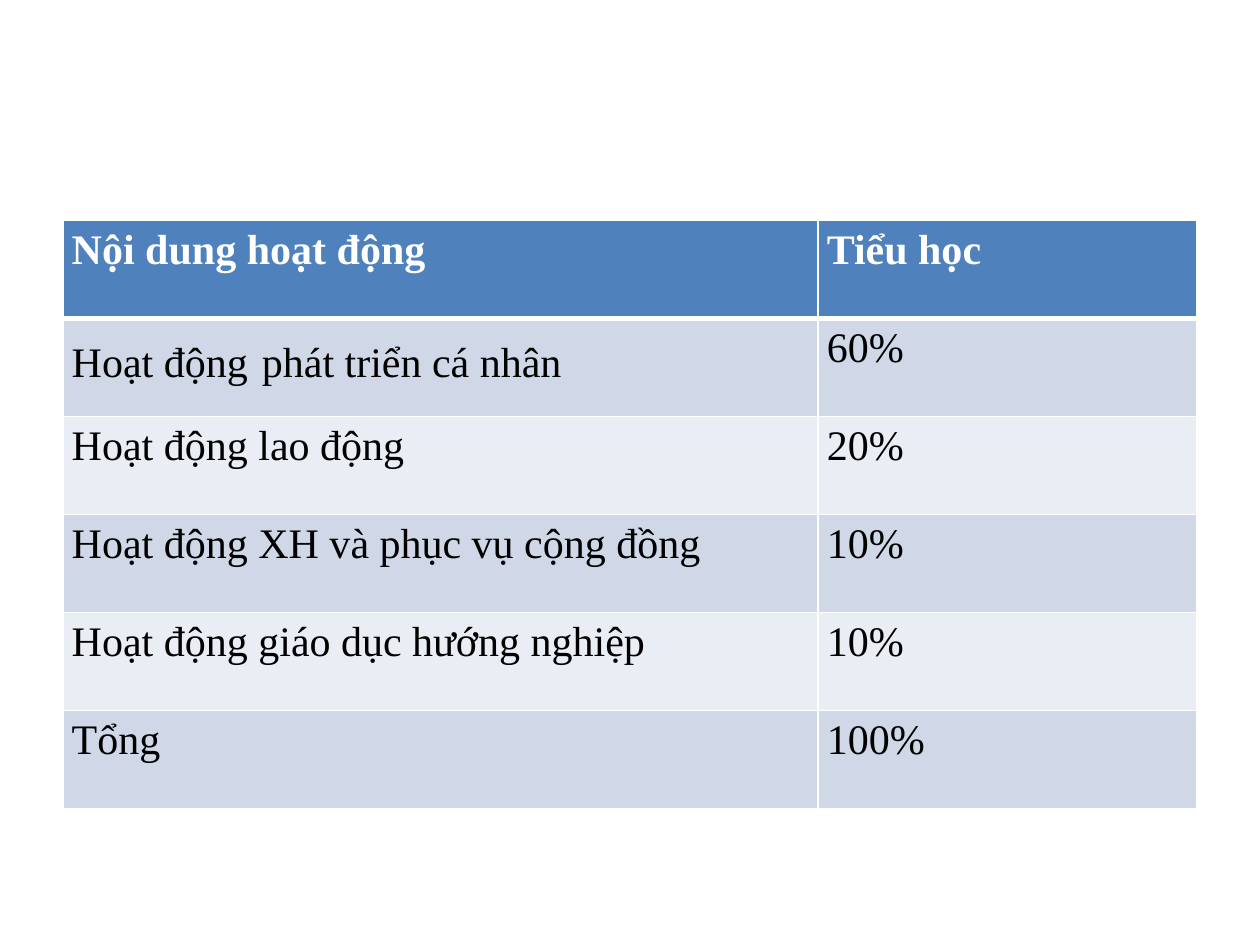
from lxml.etree import SubElement
from pptx import Presentation
from pptx.dml.color import RGBColor as Color
from pptx.enum.text import PP_ALIGN as Align
from pptx.oxml.ns import qn
from pptx.util import Pt

HEADER = (["Nội dung hoạt động"], ["Tiểu học"])
ACTIVITIES = [
    (["Hoạt động", " ", "phát triển cá nhân"], ["60%"]),
    (["Hoạt động lao động"], ["20%"]),
    (["Hoạt động XH và phục vụ cộng đồng"], ["10%"]),
    (["Hoạt động giáo dục hướng nghiệp"], ["10%"]),
    (["Tổng"], ["100%"]),
]
COLORS = {"header": "4F81BD", "odd": "D0D8E8", "even": "E9EDF4",
          "white": "FFFFFF", "black": "000000"}
FONT, TEXT_SIZE, SPACE_SIZE = "Times New Roman", 24, 32
LEFT, TOP, ROW_HEIGHT = 36, 126, 56
COLUMN_WIDTHS = (431.5, 216.5)
THIN, THICK = 1, 3


def draw_borders(cell, top, bottom):
    """Draw white borders around a cell, with the given top and bottom widths."""
    properties = cell._tc.get_or_add_tcPr()
    for side, width in {"L": THIN, "R": THIN, "T": top, "B": bottom}.items():
        line = SubElement(properties, qn(f"a:ln{side}"), w=str(Pt(width)))
        fill = SubElement(line, qn("a:solidFill"))
        SubElement(fill, qn("a:srgbClr"), val=COLORS["white"])


def write_cell(cell, pieces, ink, bold):
    """Write the pieces of text into a cell and format them."""
    cell.margin_left = cell.margin_right = Pt(5)
    cell.margin_top = cell.margin_bottom = Pt(0)
    para = cell.text_frame.paragraphs[0]
    para.alignment = Align.JUSTIFY
    para.line_spacing = 1.15
    para.space_before = para.space_after = Pt(2)
    for piece in pieces:
        span = para.add_run()
        span.text = piece
        span.font.name = FONT
        span.font.size = Pt(SPACE_SIZE if piece == " " else TEXT_SIZE)
        span.font.bold = bold
        span.font.color.rgb = Color.from_string(COLORS[ink])


def main():
    """Build the slide with the table of activities."""
    deck = Presentation()
    deck.slide_width, deck.slide_height = Pt(720), Pt(540)
    page = deck.slides.add_slide(deck.slide_layouts[6])
    rows = [HEADER] + ACTIVITIES
    table = page.shapes.add_table(
        len(rows), len(COLUMN_WIDTHS), Pt(LEFT), Pt(TOP),
        Pt(sum(COLUMN_WIDTHS)), Pt(ROW_HEIGHT * len(rows))).table
    for column, width in zip(table.columns, COLUMN_WIDTHS):
        column.width = Pt(width)
    for index, row in enumerate(rows):
        table.rows[index].height = Pt(ROW_HEIGHT)
        is_header = index == 0
        band = "header" if is_header else ("even", "odd")[index % 2]
        for position, pieces in enumerate(row):
            cell = table.cell(index, position)
            write_cell(cell, pieces, "white" if is_header else "black", is_header)
            draw_borders(cell, THICK if index == 1 else THIN,
                         THICK if is_header else THIN)
            cell.fill.solid()
            cell.fill.fore_color.rgb = Color.from_string(COLORS[band])
    deck.save("out.pptx")


if __name__ == "__main__":
    main()
